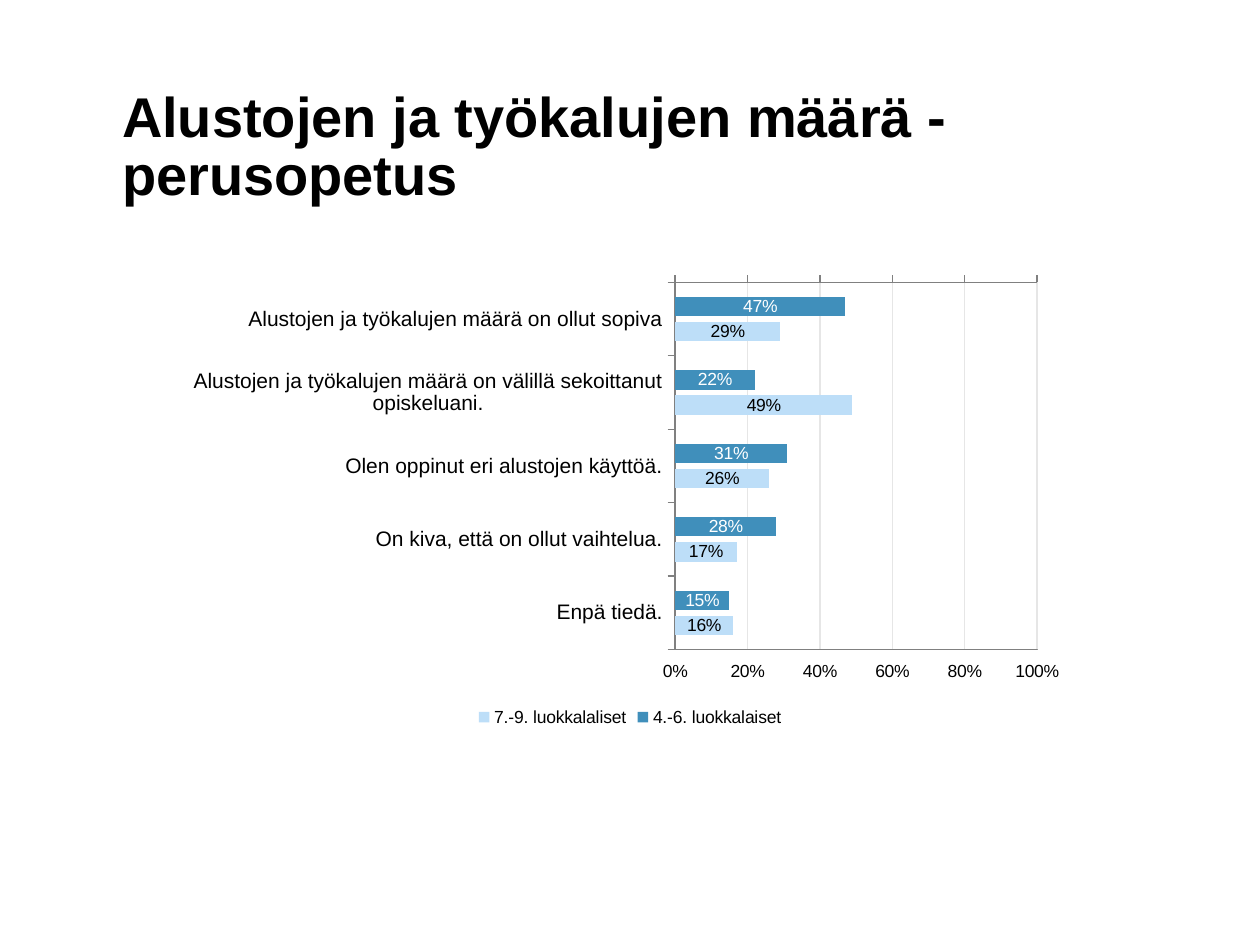
from lxml import etree
from pptx import Presentation
from pptx import util as u
from pptx.chart.data import CategoryChartData
from pptx.dml.color import RGBColor
from pptx.enum import chart as ch
from pptx.enum import text
from pptx.oxml import parse_xml
from pptx.oxml.ns import nsdecls, qn

BLACK = RGBColor(0x00, 0x00, 0x00)
WHITE = RGBColor(0xFF, 0xFF, 0xFF)
GREY = RGBColor(0x80, 0x80, 0x80)
GRID = RGBColor(0xE6, 0xE6, 0xE6)
BLUE = RGBColor(0x40, 0x8F, 0xBB)
PALE = RGBColor(0xBD, 0xDE, 0xF8)
FONT = "Arial"

CATEGORIES = [
    "Alustojen ja työkalujen määrä on ollut sopiva",
    "Alustojen ja työkalujen määrä on välillä sekoittanut opiskeluani.",
    "Olen oppinut eri alustojen käyttöä.",
    "On kiva, että on ollut vaihtelua.",
    "Enpä tiedä.",
]
SERIES = [
    ("4.-6. luokkalaiset", (0.47, 0.22, 0.31, 0.28, 0.15), BLUE, WHITE),
    ("7.-9. luokkalaliset", (0.29, 0.49, 0.26, 0.17, 0.16), PALE, BLACK),
]


def apply(obj, values):
    for name, value in values.items():
        setattr(obj, name, value)


def format_font(font, size, color=BLACK, bold=False):
    apply(font, {"name": FONT, "size": u.Pt(size), "bold": bold})
    font.color.rgb = color


def format_line(line, color):
    line.color.rgb = color
    line.width = u.Pt(0.75)


def add_title(s, words):
    sp = s.shapes.title
    apply(sp, {"left": u.Cm(2.46), "top": u.Cm(1.4),
               "width": u.Cm(20.6), "height": u.Cm(2.77)})
    tf = sp.text_frame
    apply(tf, {"margin_left": 0, "margin_top": 0, "margin_bottom": 0,
               "margin_right": u.Cm(0.25), "word_wrap": True,
               "auto_size": text.MSO_AUTO_SIZE.NONE,
               "vertical_anchor": text.MSO_ANCHOR.BOTTOM})
    p = tf.paragraphs[0]
    apply(p, {"alignment": text.PP_ALIGN.LEFT, "line_spacing": u.Pt(33)})
    r = p.add_run()
    r.text = words
    format_font(r.font, 32, bold=True)


def format_plot_area(chart):
    area = chart._chartSpace.chart.plotArea
    for old in area.findall(qn("c:layout")):
        area.remove(old)
    layout = parse_xml(f"<c:layout {nsdecls('c')}><c:manualLayout/></c:layout>")
    settings = {"layoutTarget": "inner", "xMode": "edge", "yMode": "edge",
                "x": 0.55, "y": 0.02, "w": 0.4, "h": 0.8}
    for tag, value in settings.items():
        etree.SubElement(layout[0], qn(f"c:{tag}")).set("val", str(value))
    area.insert(0, layout)
    area.append(parse_xml(
        f"<c:spPr {nsdecls('c', 'a')}>"
        f'<a:solidFill><a:srgbClr val="{WHITE}"/></a:solidFill>'
        f'<a:ln w="9525"><a:solidFill><a:srgbClr val="{GREY}"/></a:solidFill></a:ln>'
        "</c:spPr>"))


def format_axes(chart):
    cat, val = chart.category_axis, chart.value_axis
    for axis, size in ((cat, 12), (val, 10)):
        axis.major_tick_mark = ch.XL_TICK_MARK.OUTSIDE
        format_font(axis.tick_labels.font, size)
        format_line(axis.format.line, GREY)
    cat.reverse_order = True
    apply(val, {"minimum_scale": 0, "maximum_scale": 1, "major_unit": 0.2,
                "has_major_gridlines": True,
                "tick_label_position": ch.XL_TICK_LABEL_POSITION.HIGH})
    apply(val.tick_labels, {"number_format": "0%", "number_format_is_linked": False})
    format_line(val.major_gridlines.format.line, GRID)


def format_series(series, fill, label_color):
    series.format.fill.solid()
    series.format.fill.fore_color.rgb = fill
    labels = series.data_labels
    apply(labels, {"show_value": True, "number_format": "0%",
                   "number_format_is_linked": False,
                   "position": ch.XL_LABEL_POSITION.CENTER})
    format_font(labels.font, 10, label_color)


def add_bar_chart(s):
    data = CategoryChartData(number_format="0%")
    data.categories = CATEGORIES
    for name, values, _, _ in SERIES:
        data.add_series(name, values)
    chart = s.shapes.add_chart(ch.XL_CHART_TYPE.BAR_CLUSTERED, u.Cm(3.58), u.Cm(5.51),
                               u.Cm(18.24), u.Cm(9.25), data).chart
    apply(chart, {"has_title": False, "has_legend": True})
    format_font(chart.font, 10)
    apply(chart.legend, {"position": ch.XL_LEGEND_POSITION.BOTTOM,
                         "include_in_layout": False})
    format_font(chart.legend.font, 10)
    plot = chart.plots[0]
    apply(plot, {"gap_width": 150, "overlap": -30, "vary_by_categories": False})
    for series, (_, _, fill, label_color) in zip(plot.series, SERIES):
        format_series(series, fill, label_color)
    format_axes(chart)
    format_plot_area(chart)


def main():
    prs = Presentation()
    apply(prs, {"slide_width": u.Cm(25.4), "slide_height": u.Cm(19.05)})
    s = prs.slides.add_slide(prs.slide_layouts[5])
    add_title(s, "Alustojen ja työkalujen määrä - perusopetus")
    add_bar_chart(s)
    prs.save("out.pptx")


if __name__ == "__main__":
    main()
